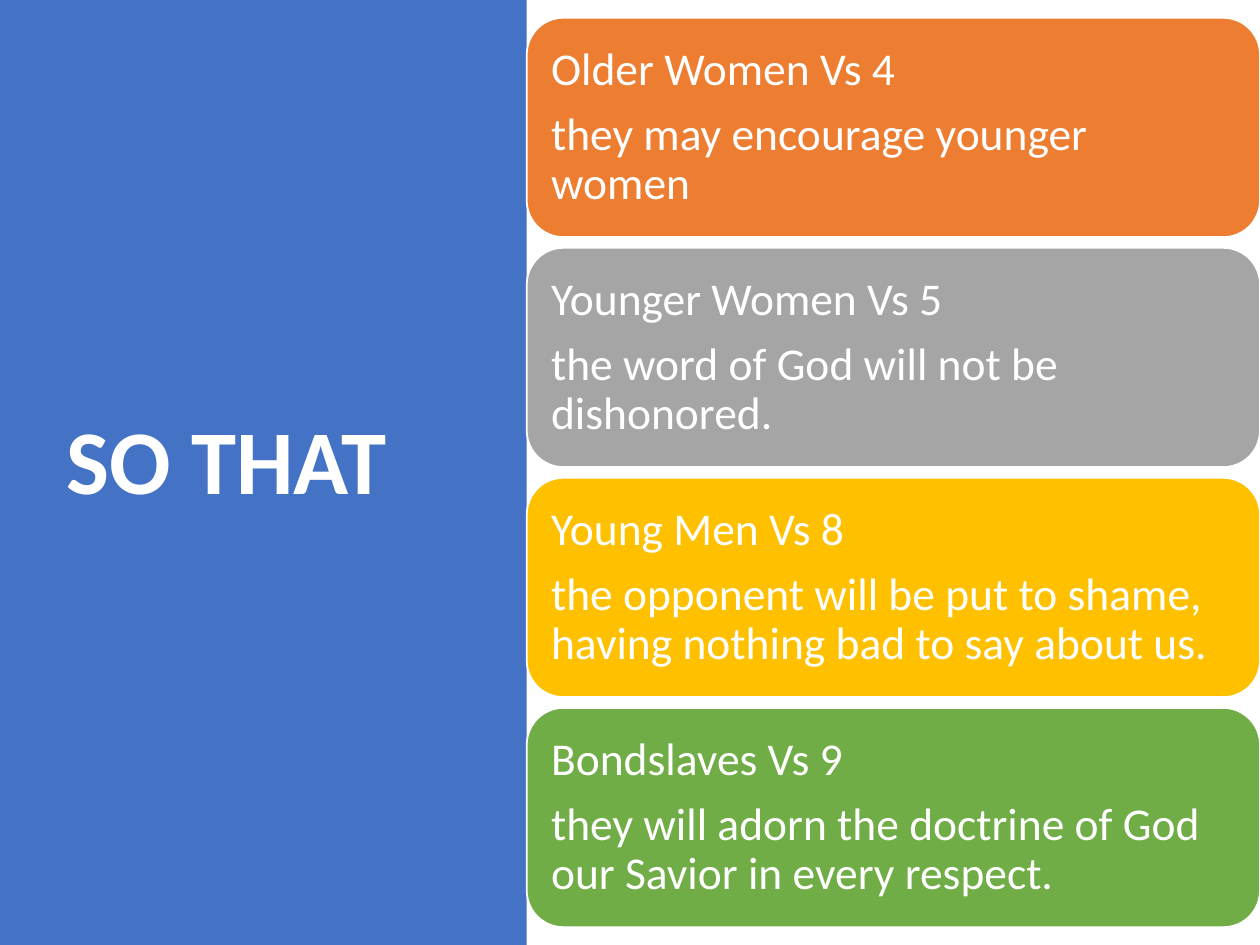
import dataclasses

import pptx
import pptx.dml.color
import pptx.enum.shapes
import pptx.enum.text
import pptx.util

Pt = pptx.util.Pt
SHAPE = pptx.enum.shapes.MSO_SHAPE
WHITE = "FFFFFF"
PANEL_WIDTH = 301
CARD_WIDTH = 419
CARD_HEIGHT = 125.3
CARD_TOP = 10.2
CARD_PITCH = 131.45


@dataclasses.dataclass
class Card:
    heading: str
    purpose: str
    color: str


CARDS = [
    Card("Older Women Vs 4", "they may encourage younger women", "ED7D31"),
    Card("Younger Women Vs 5", "the word of God will not be dishonored.", "A5A5A5"),
    Card("Young Men Vs 8",
         "the opponent will be put to shame, having nothing bad to say about us.",
         "FFC000"),
    Card("Bondslaves Vs 9",
         "they will adorn the doctrine of God our Savior in every respect.",
         "70AD47"),
]


def rgb(color: str) -> pptx.dml.color.RGBColor:
    return pptx.dml.color.RGBColor.from_string(color)


def add_box(s, kind, left: float, top: float, width: float, height: float,
            fill: str, line: str | None = None):
    sp = s.shapes.add_shape(kind, Pt(left), Pt(top), Pt(width), Pt(height))
    sp.shadow.inherit = False
    sp.fill.solid()
    sp.fill.fore_color.rgb = rgb(fill)
    if line:
        sp.line.color.rgb = rgb(line)
        sp.line.width = Pt(1)
    else:
        sp.line.fill.background()
    return sp


def write(sp, *lines: str, size: float, bold: bool = False,
          inset: float = 7.2, after: float = 0) -> None:
    tf = sp.text_frame
    tf.word_wrap = True
    tf.vertical_anchor = pptx.enum.text.MSO_ANCHOR.MIDDLE
    tf.margin_left = tf.margin_right = Pt(inset)
    tf.margin_top = tf.margin_bottom = Pt(inset)
    for i, line in enumerate(lines):
        p = tf.add_paragraph() if i else tf.paragraphs[0]
        p.alignment = pptx.enum.text.PP_ALIGN.LEFT
        p.line_spacing = 0.9
        p.space_after = Pt(after)
        r = p.add_run()
        r.text = line
        r.font.name = "Calibri"
        r.font.size = Pt(size)
        r.font.bold = bold
        r.font.color.rgb = rgb(WHITE)


def add_card(s, card: Card, top: float) -> None:
    sp = add_box(s, SHAPE.ROUNDED_RECTANGLE, PANEL_WIDTH, top,
                 CARD_WIDTH, CARD_HEIGHT, card.color, WHITE)
    write(sp, card.heading, card.purpose, size=26, inset=7.8, after=9.1)


def main() -> None:
    prs = pptx.Presentation()
    prs.slide_width, prs.slide_height = Pt(720), Pt(540)
    s = prs.slides.add_slide(prs.slide_layouts[6])
    add_box(s, SHAPE.RECTANGLE, 0, 0, PANEL_WIDTH, 540, "4472C4")
    title = s.shapes.add_textbox(Pt(31), Pt(49), Pt(224.6), Pt(433.4))
    write(title, "SO THAT", size=52, bold=True)
    for i, card in enumerate(CARDS):
        add_card(s, card, CARD_TOP + i * CARD_PITCH)
    prs.save("out.pptx")


if __name__ == "__main__":
    main()
